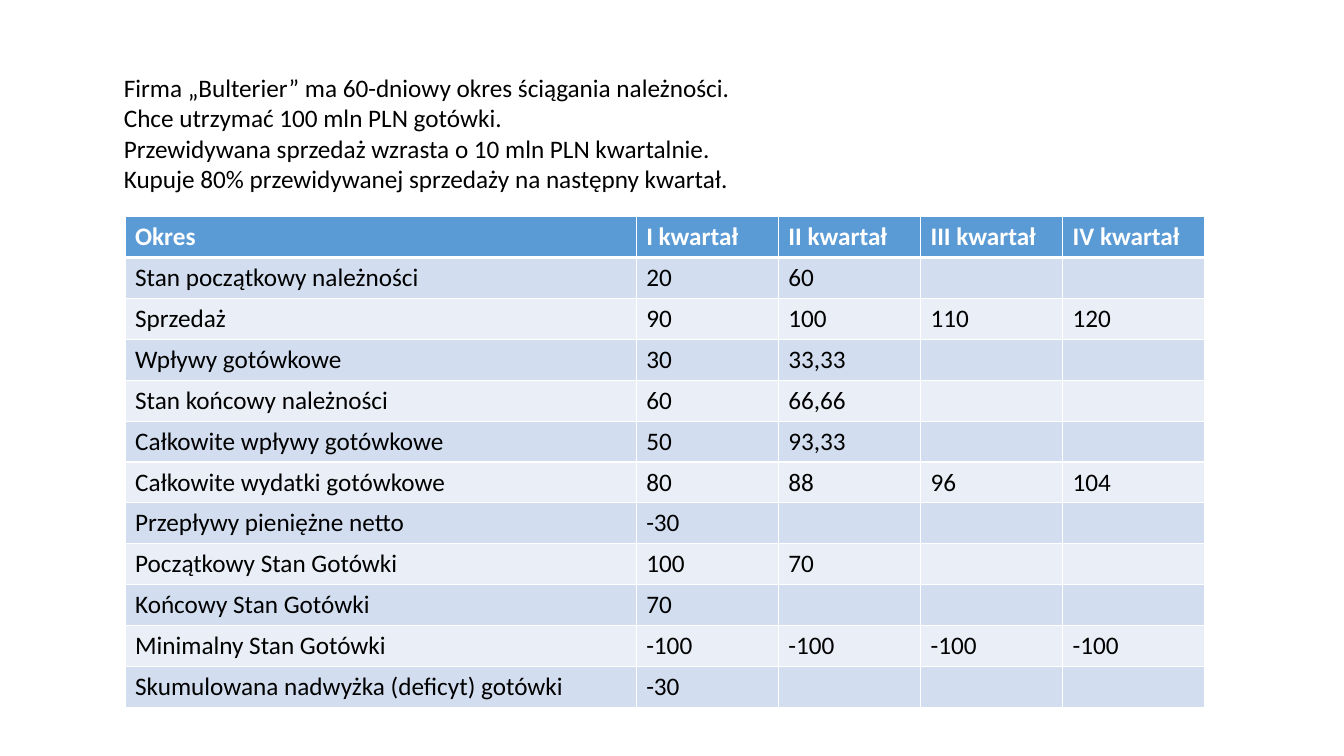
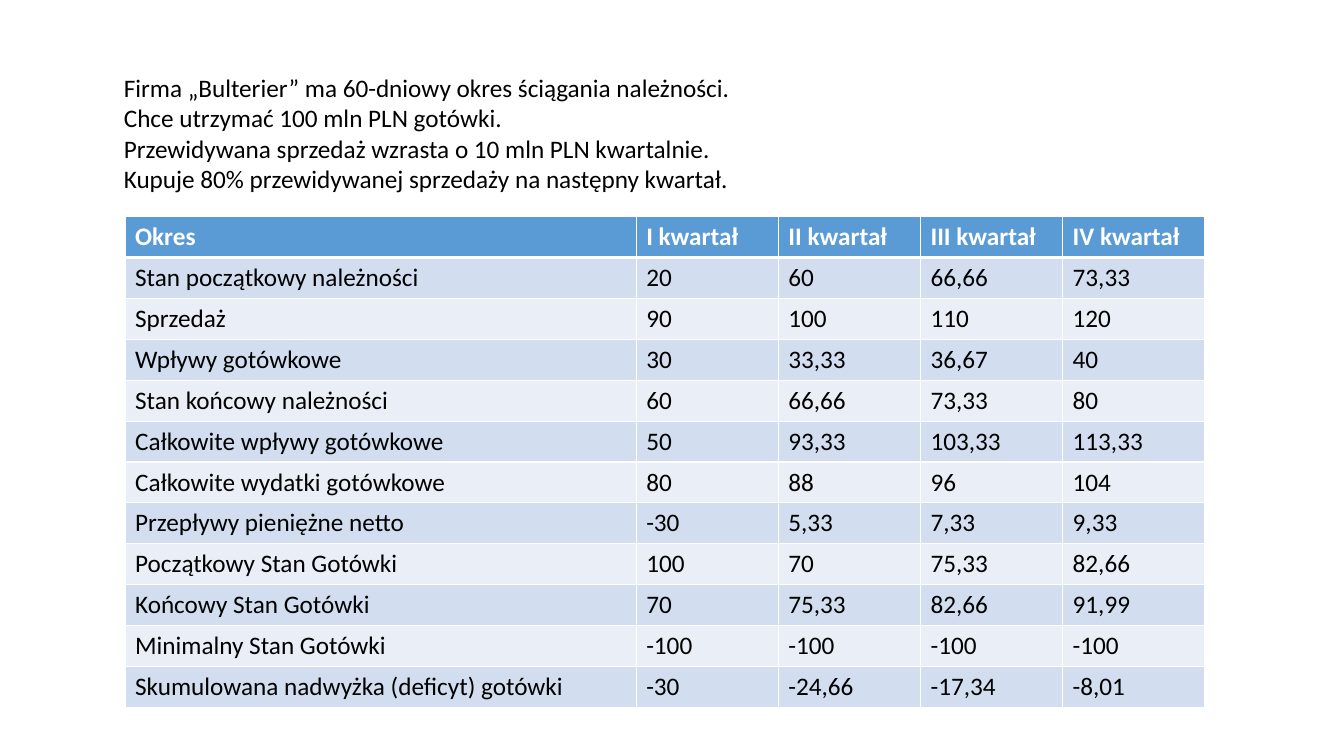
from dataclasses import dataclass

from lxml.etree import SubElement
from pptx import Presentation
from pptx.dml.color import RGBColor
from pptx.enum.text import MSO_AUTO_SIZE
from pptx.oxml.ns import qn
from pptx.util import Pt

PX = 9144  # EMU per px, 100 px to the inch


@dataclass(frozen=True)
class Theme:
    font: str = "Calibri"
    size: int = 18
    ink: str = "000000"
    white: str = "FFFFFF"
    head: str = "5B9BD5"
    bands: tuple = ("D2DEEF", "EAEFF7")


theme = Theme()

INTRO = [
    "Firma „Bulterier” ma 60-dniowy okres ściągania należności.",
    "Chce utrzymać 100 mln PLN gotówki.",
    "Przewidywana sprzedaż wzrasta o 10 mln PLN kwartalnie.",
    "Kupuje 80% przewidywanej sprzedaży na następny kwartał.",
]
HEAD = ["Okres", "I kwartał", "II kwartał", "III kwartał", "IV kwartał"]
# Label, number of quarters given in the exercise, values in the solution
ROWS = [
    ("Stan początkowy należności", 2, ["20", "60", "66,66", "73,33"]),
    ("Sprzedaż", 4, ["90", "100", "110", "120"]),
    ("Wpływy gotówkowe", 2, ["30", "33,33", "36,67", "40"]),
    ("Stan końcowy należności", 2, ["60", "66,66", "73,33", "80"]),
    ("Całkowite wpływy gotówkowe", 2, ["50", "93,33", "103,33", "113,33"]),
    ("Całkowite wydatki gotówkowe", 4, ["80", "88", "96", "104"]),
    ("Przepływy pieniężne netto", 1, ["-30", "5,33", "7,33", "9,33"]),
    ("Początkowy Stan Gotówki", 2, ["100", "70", "75,33", "82,66"]),
    ("Końcowy Stan Gotówki", 1, ["70", "75,33", "82,66", "91,99"]),
    ("Minimalny Stan Gotówki", 4, ["-100"] * 4),
    ("Skumulowana nadwyżka (deficyt) gotówki", 1,
     ["-30", "-24,66", "-17,34", "-8,01"]),
]
WIDTHS = [507] + [141] * 4


def write(para, text, color=theme.ink, bold=False):
    run = para.add_run()
    run.text = text
    style = {"name": theme.font, "size": Pt(theme.size), "bold": bold}
    for key, value in style.items():
        setattr(run.font, key, value)
    run.font.color.rgb = RGBColor.from_string(color)


def paint(cell, fill, edges):
    """Give the cell white borders of the given point widths, then its fill."""
    props = cell._tc.get_or_add_tcPr()
    for side, width in edges.items():
        line = SubElement(props, qn(f"a:ln{side}"), w=str(Pt(width)))
        solid = SubElement(line, qn("a:solidFill"))
        SubElement(solid, qn("a:srgbClr"), val=theme.white)
    cell.fill.solid()
    cell.fill.fore_color.rgb = RGBColor.from_string(fill)


deck = Presentation()
deck.slide_width, deck.slide_height = 1333 * PX, 750 * PX
blank = deck.slide_layouts[6]

for solved in (False, True):
    slide = deck.slides.add_slide(blank)

    grid = [HEAD]
    for label, given, values in ROWS:
        count = len(values) if solved else given
        grid.append([label] + values[:count] + [""] * (len(values) - count))

    frame = slide.shapes.add_table(
        len(grid), len(HEAD), 124 * PX, 215 * PX, sum(WIDTHS) * PX, 487 * PX)
    table = frame.table
    for col, width in zip(table.columns, WIDTHS):
        col.width = width * PX
    for r, texts in enumerate(grid):
        top = r == 0
        fill = theme.head if top else theme.bands[(r - 1) % 2]
        edges = {"L": 1, "R": 1}
        edges |= {"T": 1, "B": 3} if top else {"B": 1}
        for c, text in enumerate(texts):
            cell = table.cell(r, c)
            paint(cell, fill, edges)
            if text:
                write(cell.text_frame.paragraphs[0], text,
                      theme.white if top else theme.ink, top)

    box = slide.shapes.add_textbox(113 * PX, 67 * PX, 1095 * PX, 162 * PX)
    body = box.text_frame
    body.word_wrap = True
    body.auto_size = MSO_AUTO_SIZE.SHAPE_TO_FIT_TEXT
    for i, text in enumerate(INTRO):
        write(body.add_paragraph() if i else body.paragraphs[0], text)

deck.save("out.pptx")
